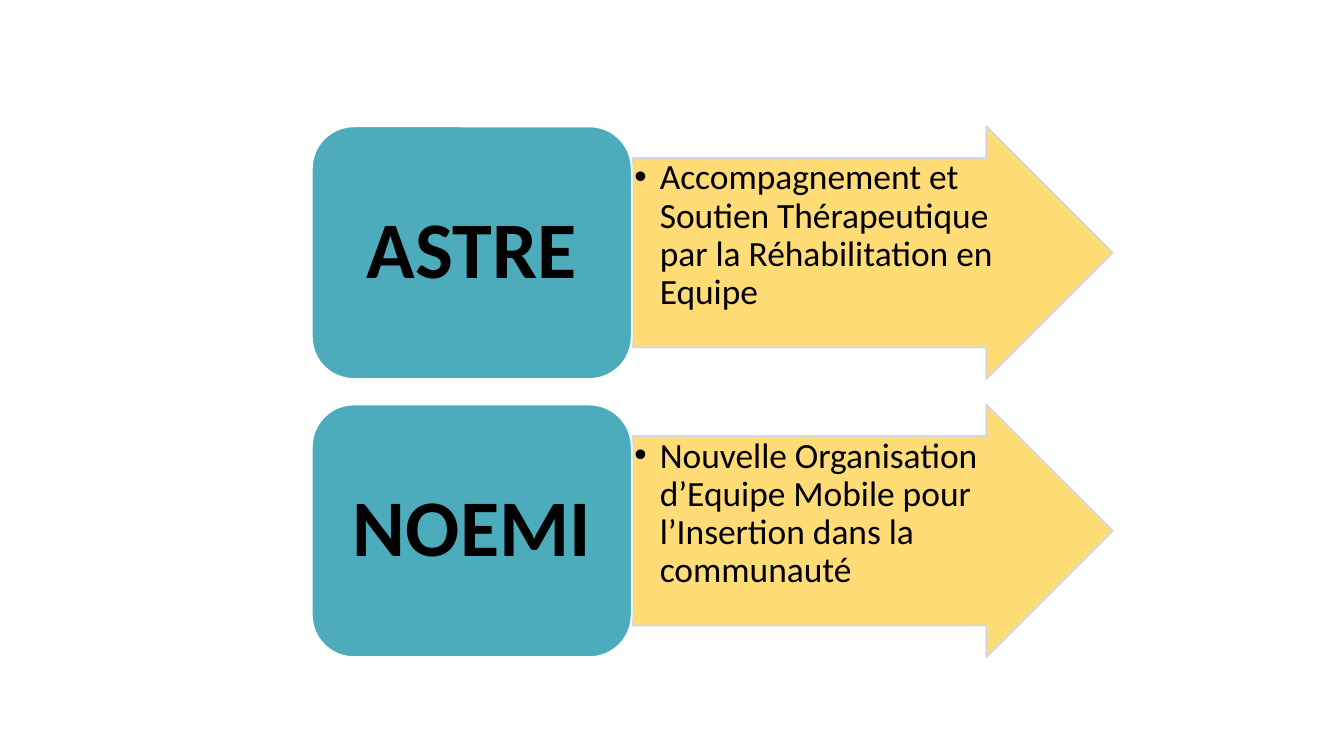
"""Build a slide that pairs two team acronyms with their meanings."""
from dataclasses import dataclass

from pptx import Presentation, util as u
from pptx.dml.color import RGBColor
from pptx.enum import shapes, text
from pptx.oxml.ns import qn
from lxml import etree


@dataclass(frozen=True)
class Theme:
    """Colours, font and type sizes of the slide."""
    label_fill: str = "4CACBC"
    label_line: str = "FFFFFF"
    arrow_fill: str = "FFD966"
    arrow_line: str = "CFD5EA"
    ink: str = "000000"
    font: str = "Calibri"
    bullet_font: str = "Arial"
    label_size: int = 43
    meaning_size: int = 19
    arrow_opacity: int = 90


@dataclass(frozen=True)
class Grid:
    """Columns and rows of the slide, in inches."""
    lefts: tuple = (2.32, 4.71)
    widths: tuple = (2.38, 3.57)
    top: float = 0.94
    row_height: float = 1.88
    row_step: float = 2.07

    def cell(self, column, row):
        """Return left, top, width and height of a cell."""
        top = self.top + row * self.row_step
        place = self.lefts[column], top, self.widths[column], self.row_height
        return [u.Inches(length) for length in place]


THEME = Theme()
GRID = Grid()
TEAMS = {
    "ASTRE": "Accompagnement et Soutien Thérapeutique par la Réhabilitation en Equipe",
    "NOEMI": "Nouvelle Organisation d’Equipe Mobile pour l’Insertion dans la communauté",
}


def set_all(target, values):
    """Set every attribute of a dict on an object."""
    for name, value in values.items():
        setattr(target, name, value)


def margins(across, down):
    """Return equal side margins and equal top and bottom margins."""
    return {"margin_left": u.Inches(across), "margin_right": u.Inches(across),
            "margin_top": u.Inches(down), "margin_bottom": u.Inches(down)}


def set_opacity(block, percent):
    """Make the fill and line of a shape partly transparent."""
    for colour in block._element.spPr.iter(qn("a:srgbClr")):
        etree.SubElement(colour, qn("a:alpha"), val=str(percent * 1000))


def add_block(page, kind, place, fill, line):
    """Add a filled and outlined preset shape without shadow."""
    block = page.shapes.add_shape(kind, *place)
    block.shadow.inherit = False
    block.fill.solid()
    block.fill.fore_color.rgb = RGBColor.from_string(fill)
    block.line.color.rgb = RGBColor.from_string(line)
    block.line.width = u.Pt(1)
    return block


def add_bullet(para, indent):
    """Give a paragraph a round bullet with a hanging indent."""
    props = para._p.get_or_add_pPr()
    props.set("marL", str(indent))
    props.set("indent", str(-indent))
    etree.SubElement(props, qn("a:buFont"), typeface=THEME.bullet_font)
    etree.SubElement(props, qn("a:buChar"), char="•")


def write(block, words, frame_format, para_format, font_format, indent=None):
    """Write one formatted paragraph, bulleted if an indent is given."""
    frame = block.text_frame
    set_all(frame, {"word_wrap": True, **frame_format})
    para = frame.paragraphs[0]
    set_all(para, {"line_spacing": 0.9, **para_format})
    if indent:
        add_bullet(para, indent)
    span = para.add_run()
    span.text = words
    for font in (para.font, span.font):
        set_all(font, {"name": THEME.font, **font_format})
        font.color.rgb = RGBColor.from_string(THEME.ink)


def add_label(page, row, words):
    """Add the rounded acronym box of a row."""
    label = add_block(page, shapes.MSO_SHAPE.ROUNDED_RECTANGLE, GRID.cell(0, row),
                      THEME.label_fill, THEME.label_line)
    write(label, words,
          {"vertical_anchor": text.MSO_ANCHOR.MIDDLE, **margins(0.18, 0.09)},
          {"alignment": text.PP_ALIGN.CENTER},
          {"size": u.Pt(THEME.label_size), "bold": True})


def add_meaning(page, row, words):
    """Add the arrow of a row with the bulleted meaning."""
    arrow = add_block(page, shapes.MSO_SHAPE.RIGHT_ARROW, GRID.cell(1, row),
                      THEME.arrow_fill, THEME.arrow_line)
    arrow.adjustments[0] = 0.75
    arrow.adjustments[1] = 0.5
    set_opacity(arrow, THEME.arrow_opacity)
    write(arrow, words,
          {"vertical_anchor": text.MSO_ANCHOR.TOP, **margins(0.01, 0.01)},
          {"alignment": text.PP_ALIGN.LEFT, "level": 1},
          {"size": u.Pt(THEME.meaning_size)}, u.Inches(0.19))


def main():
    """Build and save the deck."""
    deck = Presentation()
    width = u.Inches(10)
    set_all(deck, {"slide_width": width, "slide_height": width * 9 // 16})
    page = deck.slides.add_slide(deck.slide_layouts[6])
    for row, (acronym, meaning) in enumerate(TEAMS.items()):
        add_meaning(page, row, meaning)
        add_label(page, row, acronym)
    deck.save("out.pptx")


if __name__ == "__main__":
    main()
